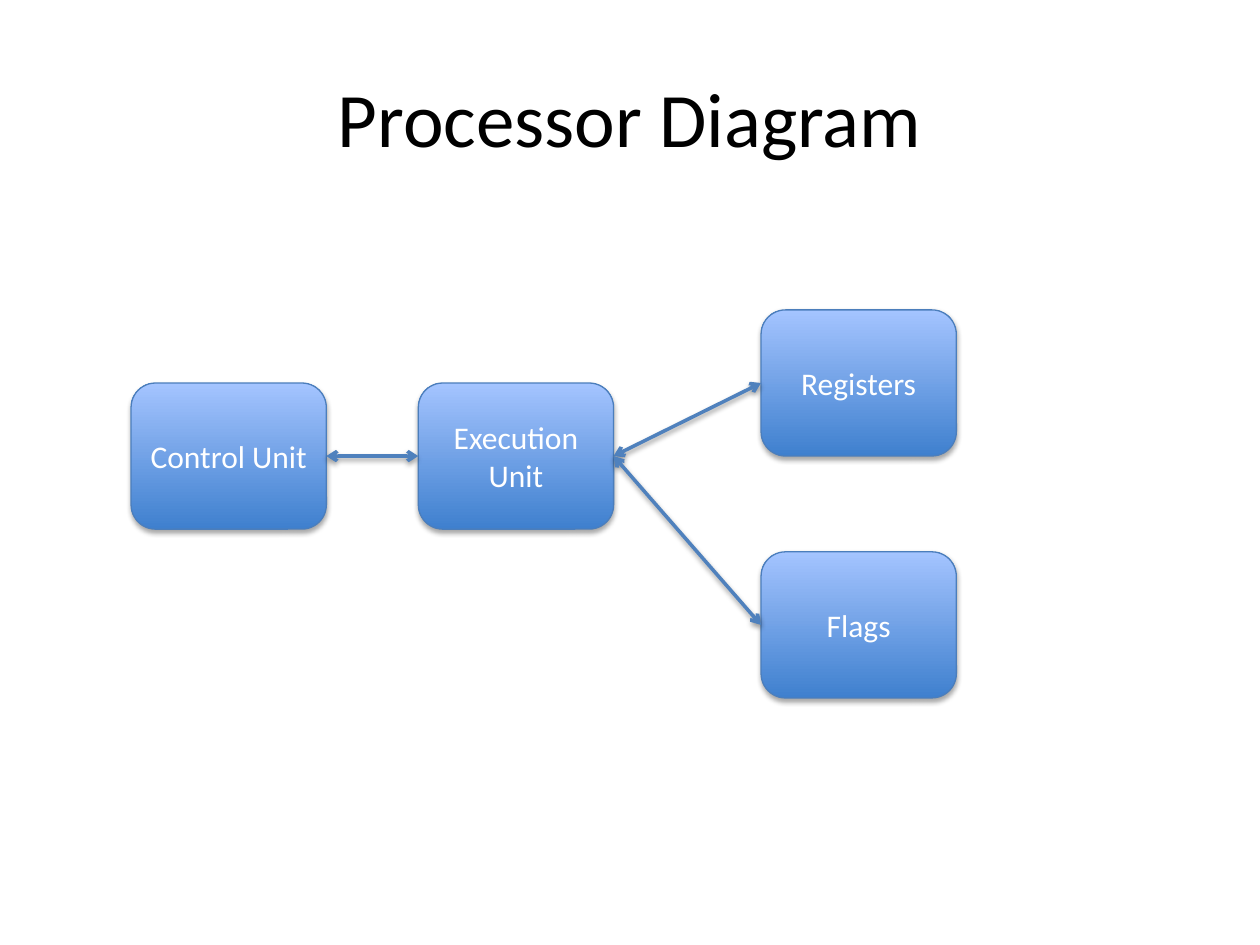
import dataclasses

import pptx
import pptx.dml.color
import pptx.enum.shapes
import pptx.enum.text
import pptx.oxml.ns
import pptx.util
from lxml import etree

Inches = pptx.util.Inches
Pt = pptx.util.Pt
rgb = pptx.dml.color.RGBColor.from_string
qn = pptx.oxml.ns.qn

LEFT, RIGHT = 1, 3


@dataclasses.dataclass(frozen=True)
class Theme:
    """Colours, font and sizes of the diagram."""

    font: str = "Calibri"
    title_size: int = 44
    unit_size: int = 18
    title_color: str = "000000"
    unit_color: str = "FFFFFF"
    gradient: tuple = ("3F80CE", "A4C4FF")
    outline: str = "4B7EBC"
    outline_width: float = 0.75
    link: str = "4F81BD"
    link_width: float = 2
    shadow: str = "000000"


def write(frame, text, *, font, size, color):
    """Put centred, formatted text in a text frame."""
    frame.word_wrap = True
    frame.vertical_anchor = pptx.enum.text.MSO_ANCHOR.MIDDLE
    frame.text = text
    paragraph = frame.paragraphs[0]
    paragraph.alignment = pptx.enum.text.PP_ALIGN.CENTER
    run_font = paragraph.runs[0].font
    run_font.name = font
    run_font.size = Pt(size)
    run_font.color.rgb = rgb(color)


class DiagramSlide:
    """Draws the parts of a block diagram on one slide."""

    def __init__(self, slide, theme):
        """Keep the slide and its theme."""
        self.slide = slide
        self.theme = theme

    def title(self, text, left, top, width, height):
        """Place and fill the title placeholder."""
        heading = self.slide.shapes.title
        heading.left, heading.top = Inches(left), Inches(top)
        heading.width, heading.height = Inches(width), Inches(height)
        write(heading.text_frame, text, font=self.theme.font,
              size=self.theme.title_size, color=self.theme.title_color)

    def unit(self, text, left, top, width=1.55, height=1.16):
        """Add a rounded block with a vertical gradient."""
        block = self.slide.shapes.add_shape(
            pptx.enum.shapes.MSO_SHAPE.ROUNDED_RECTANGLE,
            Inches(left), Inches(top), Inches(width), Inches(height))
        block.fill.gradient()
        block.fill.gradient_angle = 90
        for stop, color in zip(block.fill.gradient_stops, self.theme.gradient):
            stop.color.rgb = rgb(color)
        block.line.color.rgb = rgb(self.theme.outline)
        block.line.width = Pt(self.theme.outline_width)
        self.shadow(block, distance=1.8, opacity=35)
        write(block.text_frame, text, font=self.theme.font,
              size=self.theme.unit_size, color=self.theme.unit_color)
        return block

    def link(self, start, start_side, end, end_side):
        """Join two blocks with a two-headed arrow."""
        arrow = self.slide.shapes.add_connector(
            pptx.enum.shapes.MSO_CONNECTOR.STRAIGHT, 0, 0, 0, 0)
        arrow.begin_connect(start, start_side)
        arrow.end_connect(end, end_side)
        arrow.line.color.rgb = rgb(self.theme.link)
        arrow.line.width = Pt(self.theme.link_width)
        outline = arrow.element.find(qn("p:spPr")).find(qn("a:ln"))
        for tip in ("a:headEnd", "a:tailEnd"):
            etree.SubElement(outline, qn(tip), type="arrow")
        self.shadow(arrow, distance=1.6, opacity=38)

    def shadow(self, shape, distance, opacity):
        """Give a shape or connector a soft shadow below it."""
        properties = shape.element.find(qn("p:spPr"))
        effects = etree.SubElement(properties, qn("a:effectLst"))
        outer = etree.SubElement(
            effects, qn("a:outerShdw"), blurRad=str(Pt(3.1)),
            dist=str(Pt(distance)), dir=str(90 * 60000), rotWithShape="0")
        color = etree.SubElement(outer, qn("a:srgbClr"), val=self.theme.shadow)
        etree.SubElement(color, qn("a:alpha"), val=str(opacity * 1000))


def main():
    """Build and save the processor diagram."""
    deck = pptx.Presentation()
    deck.slide_width, deck.slide_height = Inches(10), Inches(7.5)
    title_only = deck.slide_layouts[5]
    diagram = DiagramSlide(deck.slides.add_slide(title_only), Theme())

    diagram.title("Processor Diagram", 0.5, 0.3, 9, 1.25)
    control = diagram.unit("Control Unit", 1.04, 3.04)
    execution = diagram.unit("Execution Unit", 3.32, 3.04)
    registers = diagram.unit("Registers", 6.04, 2.46)
    flags = diagram.unit("Flags", 6.04, 4.38)

    diagram.link(control, RIGHT, execution, LEFT)
    diagram.link(execution, RIGHT, registers, LEFT)
    diagram.link(flags, LEFT, execution, RIGHT)

    deck.save("out.pptx")


if __name__ == "__main__":
    main()
